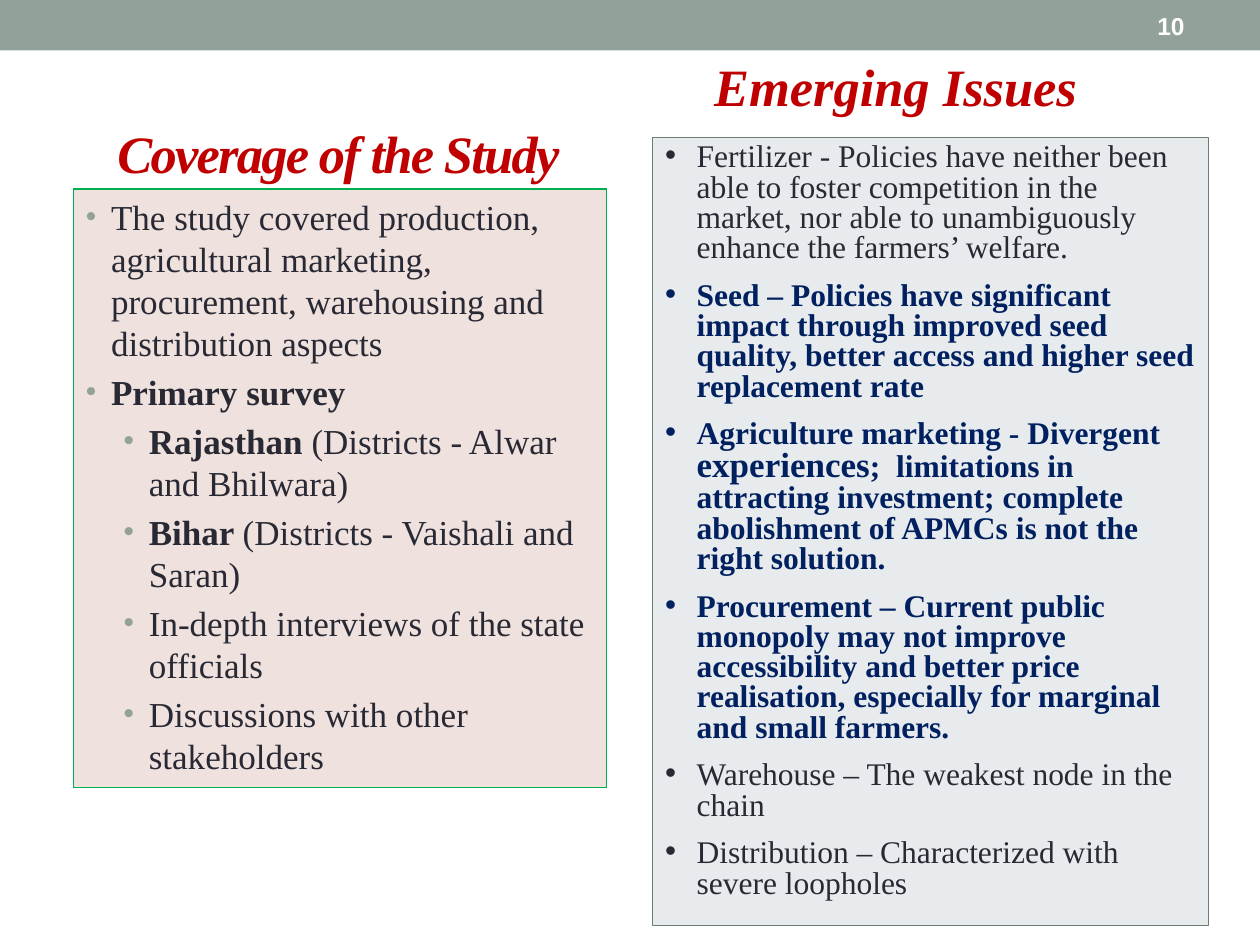
from pptx import Presentation
from pptx.dml.color import RGBColor as Rgb
from pptx.enum.shapes import MSO_SHAPE as Kind
from pptx.enum.text import MSO_ANCHOR as Anchor, PP_ALIGN as Align
from pptx.oxml.ns import qn
from pptx.util import Pt
from lxml.etree import SubElement as Sub

SERIF = "Times New Roman"
INK, NAVY, RED, SAGE = "292934", "002060", "C00000", "93A299"

COVER = [
    (0, [("The study covered production, agricultural marketing, procurement, "
          "warehousing and distribution aspects", False)]),
    (0, [("Primary survey", True)]),
    (1, [("Rajasthan", True), (" (Districts - Alwar and Bhilwara)", False)]),
    (1, [("Bihar ", True), ("(Districts - Vaishali and Saran)", False)]),
    (1, [("In-depth interviews of the state officials", False)]),
    (1, [("Discussions with other stakeholders", False)]),
]
ISSUES = [
    (False, [("Fertilizer - Policies have neither been able to foster competition in the "
              "market, nor able to unambiguously enhance the farmers’ welfare.", 18)]),
    (True, [("Seed – Policies have significant impact through improved seed quality, "
             "better access and higher seed replacement rate", 18)]),
    (True, [("Agriculture marketing - Divergent ", 18), ("experiences", 20),
            (";  limitations in attracting investment; complete abolishment of APMCs "
             "is not the right solution.", 18)]),
    (True, [("Procurement – Current public monopoly may not improve accessibility and "
             "better price realisation, especially for marginal and small farmers.", 18)]),
    (False, [("Warehouse – The weakest node in the chain", 18)]),
    (False, [("Distribution – Characterized with severe loopholes", 18)]),
]


def color(code):
    return Rgb.from_string(code)


def style(font, size=None, code=None, bold=None, name=SERIF):
    font.name = name
    if size:
        font.size = Pt(size)
    if code:
        font.color.rgb = color(code)
    if bold is not None:
        font.bold = bold


def panel(slide, area, fill, alpha=None, line=None):
    box = slide.shapes.add_shape(Kind.RECTANGLE, *map(Pt, area))
    box.shadow.inherit = False
    box.fill.solid()
    box.fill.fore_color.rgb = color(fill)
    if alpha:
        tint = box.fill._xPr.find(".//" + qn("a:srgbClr"))
        Sub(tint, qn("a:alpha"), val=str(alpha * 1000))
    if line:
        box.line.color.rgb = color(line)
        box.line.width = Pt(0.75)
    else:
        box.line.fill.background()
    frame = box.text_frame
    frame.word_wrap = True
    frame.vertical_anchor = Anchor.TOP
    return frame


def label(slide, area, text, size, code, name=SERIF, align=Align.LEFT):
    frame = slide.shapes.add_textbox(*map(Pt, area)).text_frame
    frame.word_wrap = True
    frame.vertical_anchor = Anchor.MIDDLE
    para = frame.paragraphs[0]
    para.text = text
    para.alignment = align
    style(para.font, size, code, True, name)
    return para


def bullet(frame, first, left, hang, gap, tint=None):
    para = frame.paragraphs[0] if first else frame.add_paragraph()
    para.alignment = Align.LEFT
    para.space_before = Pt(0 if first else gap)
    props = para._p.get_or_add_pPr()
    props.set("marL", str(Pt(left)))
    props.set("indent", str(-Pt(hang)))
    if tint:
        Sub(Sub(props, qn("a:buClr")), qn("a:srgbClr"), val=tint)
        Sub(props, qn("a:buSzPct"), val="85000")
    Sub(props, qn("a:buFont"), typeface="Arial")
    Sub(props, qn("a:buChar"), char="•")
    return para


def cover(slide):
    frame = panel(slide, (42, 108, 304.5, 342), "D3AEA8", 37, "00B050")
    for i, (level, parts) in enumerate(COVER):
        para = bullet(frame, i == 0, 14.4 + 21.6 * level, 14.4, 4, SAGE)
        para.level = level
        style(para.font, 20, INK)
        for text, bold in parts:
            run = para.add_run()
            run.text = text
            run.font.bold = bold
    head = label(slide, (60, 54, 282, 66), "Coverage of the Study", 30, RED)
    head.font.italic = True
    head.runs[0].font._element.set("spc", "-100")


def issues(slide):
    frame = panel(slide, (373, 78.5, 317.5, 450.5), "B3BDC8", 30, "6B7D72")
    for i, (bold, parts) in enumerate(ISSUES):
        para = bullet(frame, i == 0, 18, 18, 10)
        para.line_spacing = 0.8
        style(para.font, 18, NAVY if bold else INK, bold)
        for text, size in parts:
            run = para.add_run()
            run.text = text
            run.font.size = Pt(size)
    head = label(slide, (401, 24, 271, 54.5), "Emerging Issues", 30, RED)
    head.font.italic = True
    head.line_spacing = 0.9


def main():
    deck = Presentation()
    deck.slide_width, deck.slide_height = Pt(720), Pt(540)
    slide = deck.slides.add_slide(deck.slide_layouts[6])
    panel(slide, (0, 0, 720, 28.8), SAGE)
    label(slide, (600, 1.5, 84, 26), "10", 14, "FFFFFF", "Arial", Align.RIGHT)
    cover(slide)
    issues(slide)
    deck.save("out.pptx")


if __name__ == "__main__":
    main()
